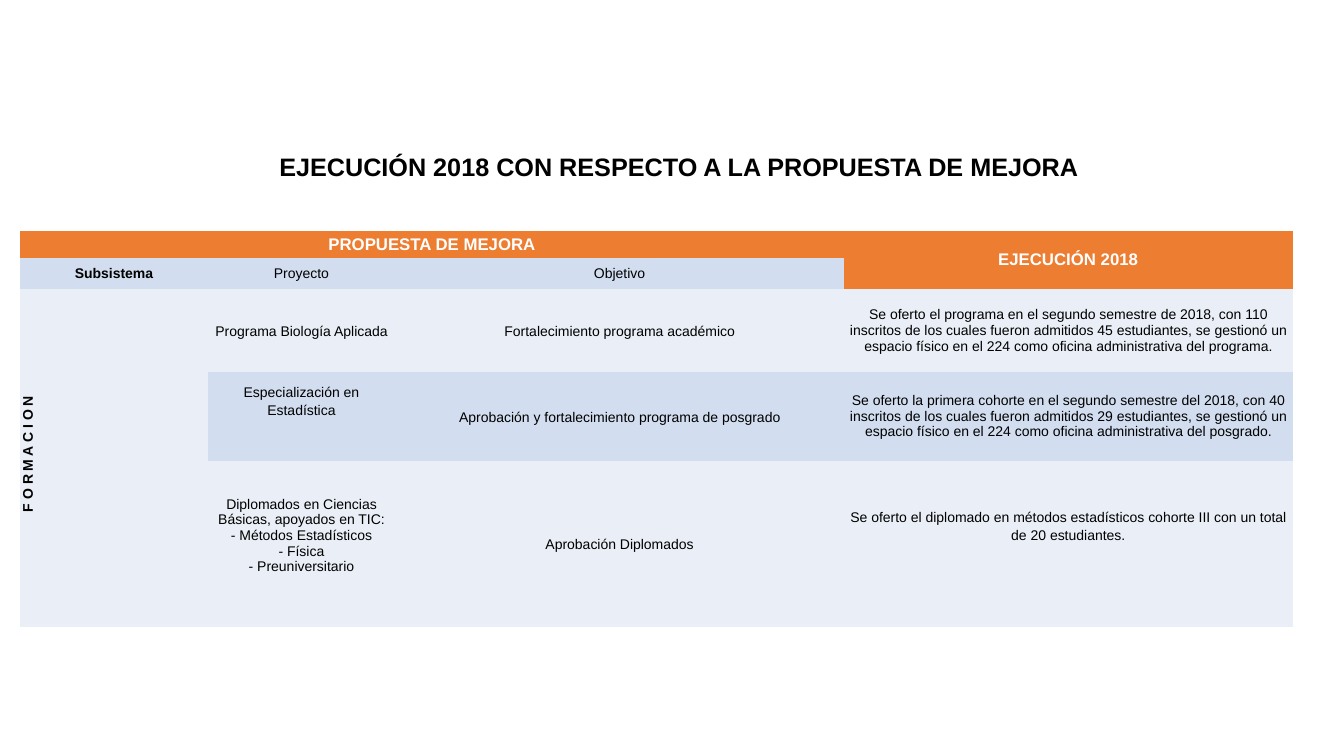
from pptx import Presentation
from pptx.dml.color import RGBColor
from pptx.enum.text import MSO_ANCHOR, MSO_AUTO_SIZE, PP_ALIGN
from pptx.util import Inches, Pt

CENTER, LEFT = PP_ALIGN.CENTER, PP_ALIGN.LEFT
MIDDLE, TOP = MSO_ANCHOR.MIDDLE, MSO_ANCHOR.TOP
NO_AUTOFIT = MSO_AUTO_SIZE.NONE
PLAIN_TABLE_STYLE = "{2D5ABB26-0587-4C30-8999-92F81FD0307C}"

FONT = "Arial"
BLACK, WHITE = "000000", "FFFFFF"
ORANGE, BLUE, PALE = "ED7D31", "D2DEEF", "EAEFF7"

TITLE = "EJECUCIÓN 2018 CON RESPECTO A LA PROPUESTA DE MEJORA"
PROPOSAL, EXECUTION = "PROPUESTA DE MEJORA", "EJECUCIÓN 2018"
HEADINGS = ["Subsistema", "Proyecto", "Objetivo"]
SUBSYSTEM = "F O R M A C I O N"

# Each project row holds (text, line spacing, space below in inches) per column
PROJECTS = [
    [("Programa Biología Aplicada", 1.15, 0),
     ("Fortalecimiento programa académico", 1.15, 0),
     ("Se oferto el programa en el segundo semestre de 2018, con 110 inscritos "
      "de los cuales fueron admitidos 45 estudiantes, se gestionó un espacio "
      "físico en el 224 como oficina administrativa del programa.", 1, 0)],
    [("Especialización en Estadística", 1.15, 0.32),
     ("Aprobación y fortalecimiento programa de posgrado", 1.15, 0),
     ("Se oferto la primera cohorte en el segundo semestre del 2018, con 40 "
      "inscritos de los cuales fueron admitidos 29 estudiantes, se gestionó un "
      "espacio físico en el 224 como oficina administrativa del posgrado.", 1, 0)],
    [("Diplomados en Ciencias Básicas, apoyados en TIC:\n- Métodos Estadísticos\n"
      "- Física\n- Preuniversitario", 1, 0.16),
     ("Aprobación Diplomados", 1.15, 0),
     ("Se oferto el diplomado en métodos estadísticos cohorte III con un total "
      "de 20 estudiantes.", 1.15, 0.37)],
]

COLUMN_WIDTHS = [1.86, 1.86, 4.45, 4.45]
ROW_HEIGHTS = [0.27, 0.31, 0.82, 0.88, 1.65]


def style_paragraph(paragraph, size, color, bold, align):
    paragraph.alignment = align
    font = paragraph.font
    font.name, font.size, font.bold = FONT, Pt(size), bold
    font.color.rgb = RGBColor.from_string(color)


def fill_cell(cell, text, fill, size=10, color=BLACK, bold=False, spacing=1, below=0):
    cell.fill.solid()
    cell.fill.fore_color.rgb = RGBColor.from_string(fill)
    cell.vertical_anchor = MIDDLE
    cell.margin_left = cell.margin_right = Inches(0.02)
    cell.margin_top, cell.margin_bottom = 0, Inches(below)
    cell.text = text
    for paragraph in cell.text_frame.paragraphs:
        style_paragraph(paragraph, size, color, bold, CENTER)
        paragraph.line_spacing = float(spacing)


def add_title(slide):
    title = slide.shapes.title
    title.left, title.top = Inches(2.67), Inches(1.45)
    title.width, title.height = Inches(8.8), Inches(0.71)
    frame = title.text_frame
    frame.text = TITLE
    frame.word_wrap = True
    frame.auto_size = NO_AUTOFIT
    frame.vertical_anchor = TOP
    style_paragraph(frame.paragraphs[0], 18, BLACK, True, LEFT)


def add_plan(slide):
    frame = slide.shapes.add_table(
        len(ROW_HEIGHTS), len(COLUMN_WIDTHS), Inches(0.2), Inches(2.29),
        Inches(sum(COLUMN_WIDTHS)), Inches(sum(ROW_HEIGHTS)))
    plan = frame.table
    plan.first_row = plan.horz_banding = False
    plan._tbl.tblPr[0].text = PLAIN_TABLE_STYLE
    for column, width in zip(plan.columns, COLUMN_WIDTHS):
        column.width = Inches(width)
    for row, height in zip(plan.rows, ROW_HEIGHTS):
        row.height = Inches(height)

    plan.cell(0, 0).merge(plan.cell(0, 2))
    plan.cell(0, 3).merge(plan.cell(1, 3))
    plan.cell(2, 0).merge(plan.cell(4, 0))

    for column, heading in ((0, PROPOSAL), (3, EXECUTION)):
        fill_cell(plan.cell(0, column), heading, ORANGE, 12, WHITE, True)
    for column, heading in enumerate(HEADINGS):
        fill_cell(plan.cell(1, column), heading, BLUE, bold=column == 0)

    subsystem = plan.cell(2, 0)
    fill_cell(subsystem, SUBSYSTEM, PALE, bold=True)
    subsystem._tc.get_or_add_tcPr().set("vert", "vert270")
    subsystem.text_frame.paragraphs[0]._p.get_or_add_pPr().set("marL", str(Inches(0.08)))

    for index, project in enumerate(PROJECTS):
        band = BLUE if index % 2 else PALE
        for column, (text, spacing, below) in enumerate(project, start=1):
            fill_cell(plan.cell(index + 2, column), text, band,
                      spacing=spacing, below=below)


def main():
    deck = Presentation()
    deck.slide_width, deck.slide_height = Inches(13.33), Inches(7.5)
    slide = deck.slides.add_slide(deck.slide_layouts.get_by_name("Title Only"))
    add_title(slide)
    add_plan(slide)
    deck.save("out.pptx")


if __name__ == "__main__":
    main()
